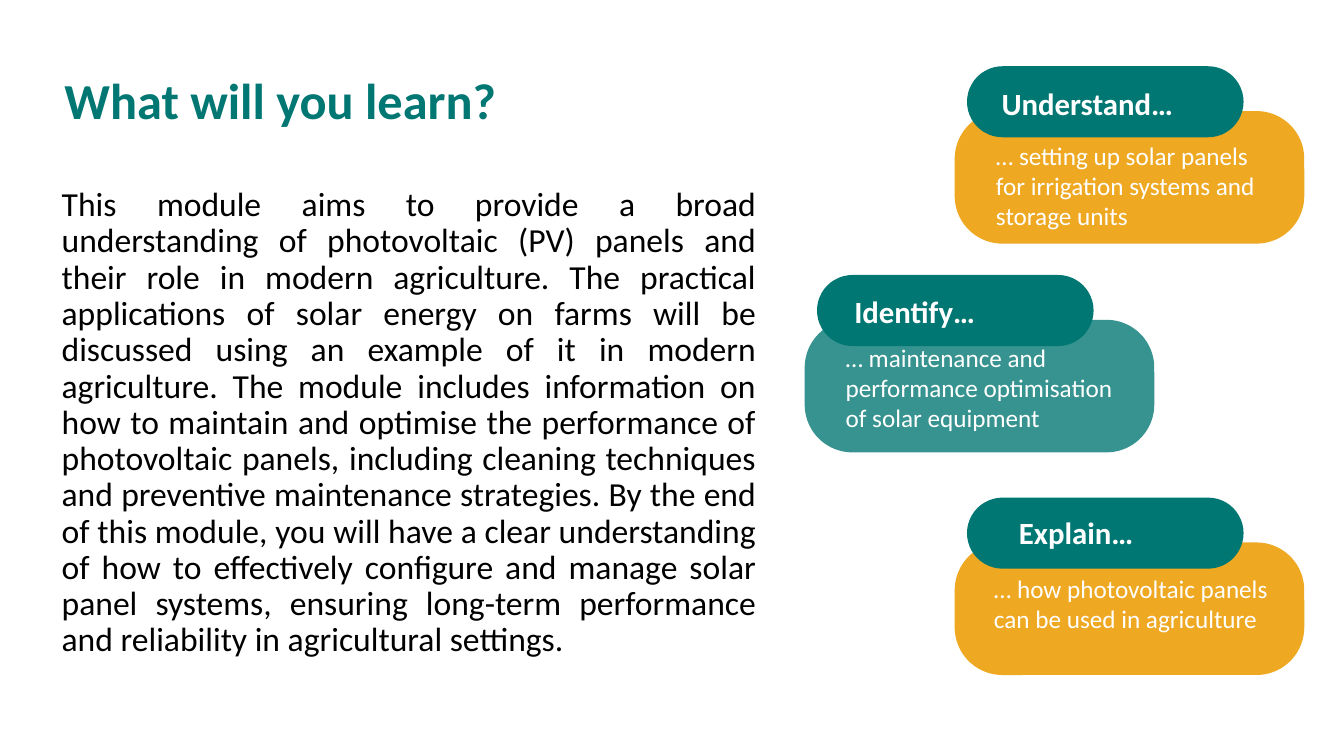
"""Build the "What will you learn?" slide with its three learning goals."""
from lxml import etree
from pptx import Presentation
from pptx.dml.color import RGBColor
from pptx.enum import shapes, text
from pptx.oxml import ns
from pptx.util import Cm, Pt

TEAL = RGBColor(0x00, 0x77, 0x72)
AMBER = RGBColor(0xEE, 0xA8, 0x21)
WHITE = RGBColor(0xFF, 0xFF, 0xFF)
BLACK = RGBColor(0x00, 0x00, 0x00)
FONT = "Calibri"

TITLE = "What will you learn?"
INTRODUCTION = (
    "This module aims to provide a broad understanding of photovoltaic (PV) panels "
    "and their role in modern agriculture. The practical applications of solar energy "
    "on farms will be discussed using an example of it in modern agriculture. The module "
    "includes information on how to maintain and optimise the performance of photovoltaic "
    "panels, including cleaning techniques and preventive maintenance strategies. By the "
    "end of this module, you will have a clear understanding of how to effectively "
    "configure and manage solar panel systems, ensuring long-term performance and "
    "reliability in agricultural settings."
)
GOALS = [
    (24.06, 2.8, AMBER, 100,
     ("Understand…", 24.99, 2.01, 6.96, 1.19),
     ("… setting up solar panels for irrigation systems and storage units",
      24.85, 3.4, 7.23, 3.33)),
    (20.28, 8.06, TEAL, 79,
     ("Identify…", 21.28, 7.24, 5.64, 1.19),
     ("… maintenance and performance optimisation of solar equipment",
      21.06, 8.49, 7.6, 3.33)),
    (24.06, 13.67, AMBER, 100,
     ("Explain…", 25.43, 12.83, 5.38, 1.19),
     ("… how photovoltaic panels can be used in agriculture",
      24.8, 14.32, 7.64, 1.8)),
]


def write_text(shape, content, size, color, bold=False):
    shape.text_frame.text = content
    shape.text_frame.word_wrap = True
    shape.text_frame.auto_size = text.MSO_AUTO_SIZE.NONE
    paragraph = shape.text_frame.paragraphs[0]
    font = paragraph.runs[0].font
    font.name, font.size, font.bold = FONT, Pt(size), bold
    font.color.rgb = color
    return paragraph


def place_placeholder(shape, left, top, width, height, anchor):
    shape.left, shape.top = Cm(left), Cm(top)
    shape.width, shape.height = Cm(width), Cm(height)
    shape.text_frame.vertical_anchor = anchor


def format_paragraph(paragraph, alignment):
    properties = paragraph._p.get_or_add_pPr()
    properties.set("marL", "0")
    properties.set("indent", "0")
    etree.SubElement(properties, ns.qn("a:buNone"))
    paragraph.alignment = alignment
    paragraph.line_spacing = 0.9
    paragraph.space_before = Pt(0)


def add_rounded_box(slide, left, top, width, height, rounding, color, opacity=100):
    shape = slide.shapes.add_shape(
        shapes.MSO_SHAPE.ROUNDED_RECTANGLE, Cm(left), Cm(top), Cm(width), Cm(height))
    shape.adjustments[0] = rounding
    shape.shadow.inherit = False
    shape.line.fill.background()
    shape.fill.solid()
    shape.fill.fore_color.rgb = color
    if opacity < 100:
        solid_color = shape._element.spPr.find(".//" + ns.qn("a:srgbClr"))
        etree.SubElement(solid_color, ns.qn("a:alpha"), val=str(opacity * 1000))


def add_label(slide, label, size, bold=False):
    content, *box = label
    shape = slide.shapes.add_textbox(*map(Cm, box))
    write_text(shape, content, size, WHITE, bold)


def add_goal(slide, left, top, color, opacity, heading, detail):
    add_rounded_box(slide, left, top, 8.81, 3.34, 0.36, color, opacity)
    add_rounded_box(slide, left + 0.31, top - 1.13, 6.97, 1.79, 0.5, TEAL)
    add_label(slide, heading, 22, bold=True)
    add_label(slide, detail, 18)


def main():
    presentation = Presentation()
    presentation.slide_width, presentation.slide_height = Cm(33.87), Cm(19.05)
    slide = presentation.slides.add_slide(presentation.slide_layouts[1])
    title, body = slide.placeholders

    place_placeholder(title, 1.37, 1.7, 20.32, 1.8, text.MSO_ANCHOR.MIDDLE)
    format_paragraph(write_text(title, TITLE, 36, TEAL, bold=True), text.PP_ALIGN.LEFT)
    place_placeholder(body, 1.3, 4.6, 18.01, 13.74, text.MSO_ANCHOR.TOP)
    format_paragraph(write_text(body, INTRODUCTION, 24, BLACK), text.PP_ALIGN.JUSTIFY)

    for goal in GOALS:
        add_goal(slide, *goal)
    presentation.save("out.pptx")


if __name__ == "__main__":
    main()
